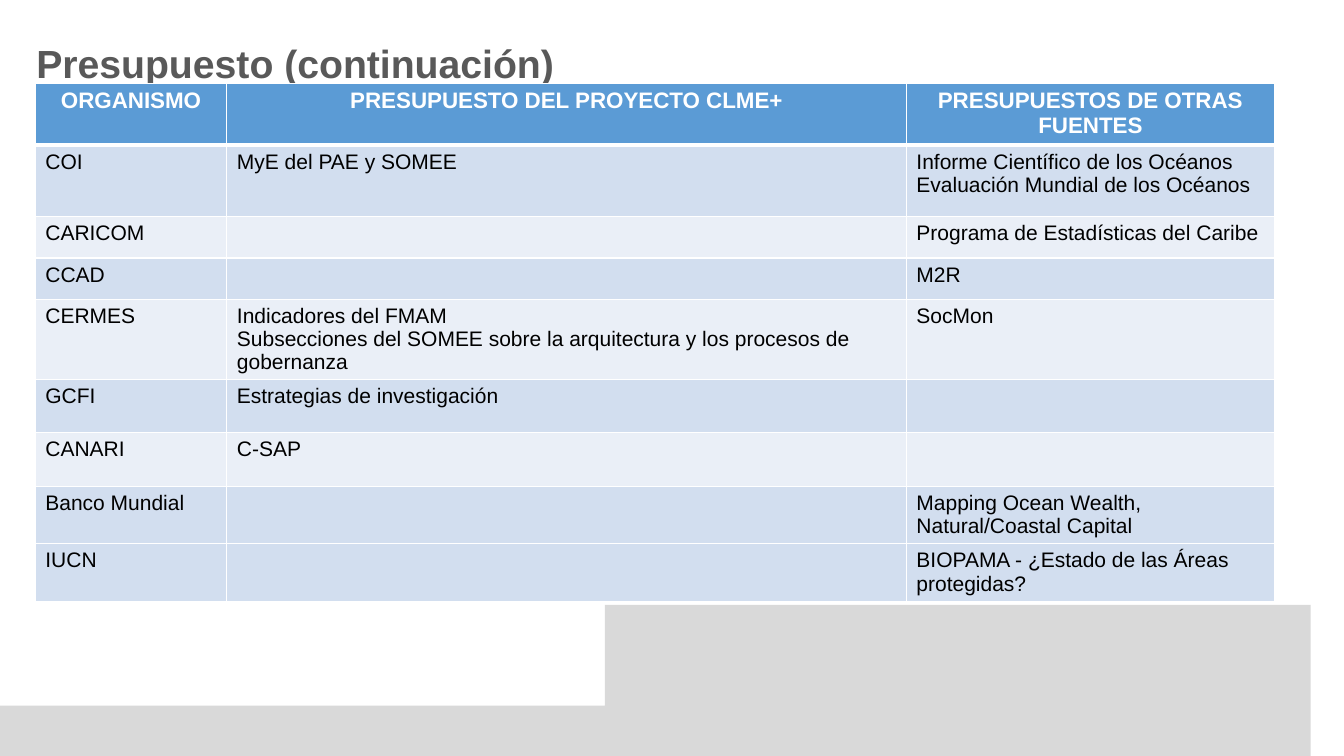
from dataclasses import dataclass

from lxml.etree import SubElement
from pptx import Presentation
from pptx.dml.color import RGBColor as RGB
from pptx.enum.text import MSO_ANCHOR as Anchor, PP_ALIGN as Align
from pptx.oxml.ns import qn
from pptx.util import Inches, Pt


@dataclass(frozen=True)
class Theme:
    font: str = "Arial"
    title: str = "595959"
    text: str = "000000"
    white: str = "FFFFFF"
    header: str = "5B9BD5"
    dark_band: str = "D2DEEF"
    light_band: str = "EAEFF7"
    wave: str = "D9D9D9"
    title_size: int = 28
    header_size: int = 16
    body_size: int = 15
    rule: int = 1
    header_rule: int = 3


THEME = Theme()
WIDTH, HEIGHT = 13.33, 7.5
TABLE_LEFT, TABLE_TOP = 0.35, 0.83
COLUMNS = (1.9, 6.74, 3.65)
ROW_HEIGHTS = (0.61, 0.71, 0.41, 0.41, 0.77, 0.53, 0.53, 0.57, 0.57)
HEADINGS = ("ORGANISMO", "PRESUPUESTO DEL PROYECTO CLME+",
            "PRESUPUESTOS DE OTRAS FUENTES")
BUDGETS = (
    ("COI", "MyE del PAE y SOMEE",
     "Informe Científico de los Océanos\nEvaluación Mundial de los Océanos"),
    ("CARICOM", "", "Programa de Estadísticas del Caribe"),
    ("CCAD", "", "M2R"),
    ("CERMES", "Indicadores del FMAM\nSubsecciones del SOMEE sobre la "
     "arquitectura y los procesos de gobernanza", "SocMon"),
    ("GCFI", "Estrategias de investigación", ""),
    ("CANARI", "C-SAP", ""),
    ("Banco Mundial", "", "Mapping Ocean Wealth, Natural/Coastal Capital"),
    ("IUCN", "", "BIOPAMA - ¿Estado de las Áreas protegidas?"),
)
WAVE_START = (WIDTH, 6.46)
WAVE_CURVES = (
    ((11.65, 6.22), (9.02, 6.16), (5.02, 6.63)),
    ((1.33, 7.07), (0.26, 6.68), (-0.02, 6.51)),
)


def style_font(font, size, color, bold=False):
    font.name, font.size, font.bold = THEME.font, Pt(size), bold
    font.color.rgb = RGB.from_string(color)


def bezier(p0, p1, p2, p3, steps=40):
    """Return points along a cubic curve, without its first point."""
    ts = [i / steps for i in range(1, steps + 1)]
    return [tuple((1 - t) ** 3 * a + 3 * (1 - t) ** 2 * t * b
                  + 3 * (1 - t) * t ** 2 * c + t ** 3 * d
                  for a, b, c, d in zip(p0, p1, p2, p3)) for t in ts]


def add_wave(s):
    points = [WAVE_START]
    for curve in WAVE_CURVES:
        points += bezier(points[-1], *curve)
    points.append((points[-1][0], HEIGHT))
    builder = s.shapes.build_freeform(WIDTH, HEIGHT, scale=Inches(1))
    builder.add_line_segments(points)
    sp = builder.convert_to_shape()
    sp.shadow.inherit = False
    sp.fill.solid()
    sp.fill.fore_color.rgb = RGB.from_string(THEME.wave)
    sp.line.fill.background()


def set_title(s, text):
    sp = s.shapes.title
    sp.left, sp.top = Inches(0.26), Inches(0.25)
    sp.width, sp.height = Inches(8.79), Inches(0.6)
    tf = sp.text_frame
    tf.text, tf.vertical_anchor = text, Anchor.TOP
    p = tf.paragraphs[0]
    p.alignment, p.line_spacing = Align.LEFT, Pt(40)
    p.space_before, p.space_after = Pt(0), Pt(4)
    style_font(p.font, THEME.title_size, THEME.title, True)


def add_borders(cell, top, bottom):
    tc_pr = cell._tc.get_or_add_tcPr()
    widths = {"L": THEME.rule, "R": THEME.rule, "T": top, "B": bottom}
    for side, width in widths.items():
        line = SubElement(tc_pr, qn(f"a:ln{side}"), w=str(Pt(width)))
        fill = SubElement(line, qn("a:solidFill"))
        SubElement(fill, qn("a:srgbClr"), val=THEME.white)


def fill_cell(cell, text, row):
    header = row == 0
    last = row == len(BUDGETS)
    band = THEME.dark_band if row % 2 or last else THEME.light_band
    add_borders(cell, THEME.header_rule if row == 1 else THEME.rule,
                THEME.header_rule if header else THEME.rule)
    cell.fill.solid()
    cell.fill.fore_color.rgb = RGB.from_string(
        THEME.header if header else band)
    cell.text = text
    for p in cell.text_frame.paragraphs:
        p.alignment = Align.CENTER if header else Align.LEFT
        style_font(p.font, THEME.header_size if header else THEME.body_size,
                   THEME.white if header else THEME.text, header)


def add_budget_table(s):
    rows = (HEADINGS, *BUDGETS)
    table = s.shapes.add_table(
        len(rows), len(COLUMNS), Inches(TABLE_LEFT), Inches(TABLE_TOP),
        Inches(sum(COLUMNS)), Inches(sum(ROW_HEIGHTS))).table
    for column, width in zip(table.columns, COLUMNS):
        column.width = Inches(width)
    for i, (row, height) in enumerate(zip(table.rows, ROW_HEIGHTS)):
        row.height = Inches(height)
        for cell, text in zip(row.cells, rows[i]):
            fill_cell(cell, text, i)


def main():
    prs = Presentation()
    prs.slide_width, prs.slide_height = Inches(WIDTH), Inches(HEIGHT)
    s = prs.slides.add_slide(prs.slide_layouts.get_by_name("Title Only"))
    set_title(s, "Presupuesto (continuación)")
    add_wave(s)
    add_budget_table(s)
    prs.save("out.pptx")


if __name__ == "__main__":
    main()
